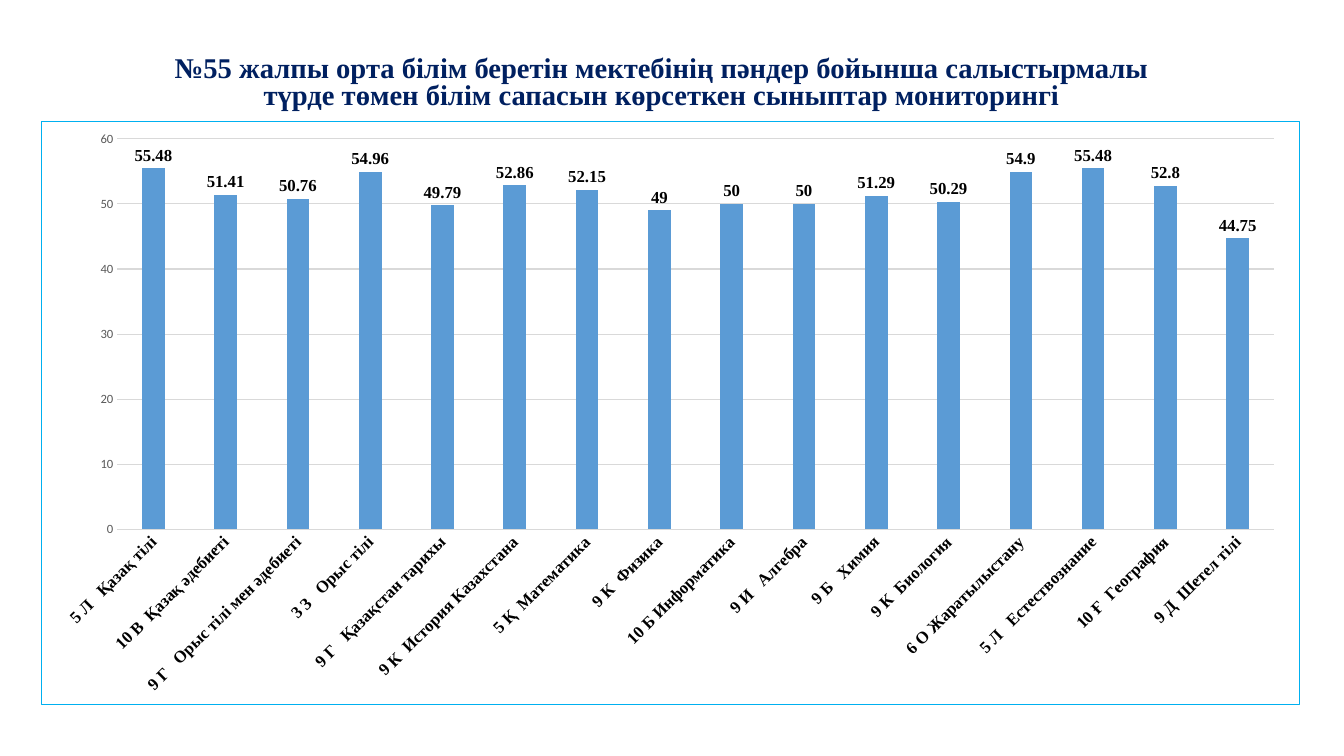
from typing import NamedTuple

from lxml import etree
from pptx import Presentation
from pptx import util as u
from pptx.chart.data import CategoryChartData
from pptx.dml.color import RGBColor
from pptx.enum import chart as ch, text
from pptx.oxml import parse_xml
from pptx.oxml.ns import nsdecls, qn

NAVY = RGBColor(0x00, 0x20, 0x60)
BLUE = RGBColor(0x5B, 0x9B, 0xD5)
CYAN = RGBColor(0x00, 0xB0, 0xF0)
PALE = RGBColor(0xD9, 0xD9, 0xD9)
GREY = RGBColor(0x59, 0x59, 0x59)
BLACK = RGBColor(0x00, 0x00, 0x00)
WHITE = RGBColor(0xFF, 0xFF, 0xFF)
SERIF = "Times New Roman"
SANS = "Calibri"
WIDE, HIGH = u.Inches(13.33), u.Inches(7.5)
TITLE = ("№55 жалпы орта білім беретін мектебінің пәндер бойынша салыстырмалы "
         "түрде төмен білім сапасын көрсеткен сыныптар мониторингі")


class Box(NamedTuple):
    """Place and size as shares of the slide."""
    x: float
    y: float
    w: float
    h: float


class Score(NamedTuple):
    name: str
    mark: float


HEAD = Box(1.56 / 13.33, 0.51 / 7.5, 10 / 13.33, 0.69 / 7.5)
BODY = Box(0.41 / 13.33, 1.2 / 7.5, 12.48 / 13.33, 5.79 / 7.5)
PLOT = Box(0.06, 0.03, 0.92, 0.67)  # shares of the chart

SCORES = [
    Score("5 Л   Қазақ тілі", 55.48),
    Score("10 В  Қазақ әдебиеті", 51.41),
    Score("9 Г   Орыс тілі мен әдебиеті", 50.76),
    Score("3 З   Орыс тілі", 54.96),
    Score("9 Г   Қазақстан тарихы", 49.79),
    Score("9 К  История Казахстана", 52.86),
    Score("5 Қ  Математика", 52.15),
    Score("9 К  Физика", 49),
    Score("10 Б Информатика", 50),
    Score("9 И   Алгебра", 50),
    Score("9 Б   Химия", 51.29),
    Score("9 К  Биология", 50.29),
    Score("6 О Жаратылыстану", 54.9),
    Score("5 Л   Естествознание", 55.48),
    Score("10 Ғ  География", 52.8),
    Score("9 Д  Шетел тілі", 44.75),
]


def place(box: Box) -> tuple[int, ...]:
    return (round(box.x * WIDE), round(box.y * HIGH),
            round(box.w * WIDE), round(box.h * HIGH))


def assign(item, **values) -> None:
    for key, value in values.items():
        setattr(item, key, value)


def style(font, size: float, name: str, color: RGBColor, bold: bool = False) -> None:
    assign(font, size=u.Pt(size), name=name, bold=bold)
    font.color.rgb = color


def rule(line, color: RGBColor) -> None:
    line.width = u.Pt(0.75)
    line.color.rgb = color


def add_head(slide) -> None:
    head = slide.shapes.title
    spots = zip(("left", "top", "width", "height"), place(HEAD))
    assign(head, **dict(spots))
    frame = head.text_frame
    frame.text = TITLE
    assign(frame, word_wrap=True, auto_size=text.MSO_AUTO_SIZE.NONE,
           vertical_anchor=text.MSO_ANCHOR.TOP)
    para = frame.paragraphs[0]
    assign(para, alignment=text.PP_ALIGN.CENTER, line_spacing=0.8,
           space_before=u.Pt(0))
    style(para.runs[0].font, 20.4, SERIF, NAVY, True)


def frame_chart(chart) -> None:
    """Add the outer border and fix the inner plot area."""
    root = chart._chartSpace
    root.find(qn("c:chart")).addnext(parse_xml(
        f'<c:spPr {nsdecls("c", "a")}><a:noFill/><a:ln w="9525"><a:solidFill>'
        f'<a:srgbClr val="{CYAN}"/></a:solidFill></a:ln></c:spPr>'))
    area = root.find(".//" + qn("c:plotArea"))
    old = area.find(qn("c:layout"))
    if old is not None:
        area.remove(old)
    layout = etree.Element(qn("c:layout"))
    area.insert(0, layout)
    manual = etree.SubElement(layout, qn("c:manualLayout"))
    marks = {"layoutTarget": "inner", "xMode": "edge", "yMode": "edge"}
    for tag, value in {**marks, **PLOT._asdict()}.items():
        etree.SubElement(manual, qn("c:" + tag), val=str(value))


def add_bars(slide) -> None:
    data = CategoryChartData()
    data.categories = [score.name for score in SCORES]
    data.add_series("Series 1", [score.mark for score in SCORES])
    chart = slide.shapes.add_chart(
        ch.XL_CHART_TYPE.COLUMN_CLUSTERED, *place(BODY), data).chart
    assign(chart, has_legend=False, has_title=False)
    style(chart.font, 10, SANS, BLACK)

    names, marks = chart.category_axis, chart.value_axis
    for axis in (names, marks):
        assign(axis, major_tick_mark=ch.XL_TICK_MARK.NONE,
               minor_tick_mark=ch.XL_TICK_MARK.NONE)
    style(names.tick_labels.font, 12, SERIF, BLACK, True)
    rule(names.format.line, PALE)
    turn = names._element.find(qn("c:txPr")).find(qn("a:bodyPr"))
    turn.set("rot", str(-45 * 60000))
    turn.set("vert", "horz")
    assign(marks, minimum_scale=0, maximum_scale=60, major_unit=10)
    style(marks.tick_labels.font, 9, SANS, GREY)
    marks.format.line.fill.background()
    rule(marks.major_gridlines.format.line, PALE)

    plot = chart.plots[0]
    assign(plot, gap_width=219, overlap=-27, vary_by_categories=False)
    bars = plot.series[0]
    bars.format.fill.solid()
    bars.format.fill.fore_color.rgb = BLUE
    labels = bars.data_labels
    assign(labels, show_value=True, position=ch.XL_LABEL_POSITION.OUTSIDE_END)
    style(labels.font, 12, SERIF, BLACK, True)
    frame_chart(chart)


def main() -> None:
    deck = Presentation()
    assign(deck, slide_width=WIDE, slide_height=HIGH)
    slide = deck.slides.add_slide(deck.slide_layouts[5])
    slide.background.fill.solid()
    slide.background.fill.fore_color.rgb = WHITE
    add_head(slide)
    add_bars(slide)
    deck.save("out.pptx")


if __name__ == "__main__":
    main()
